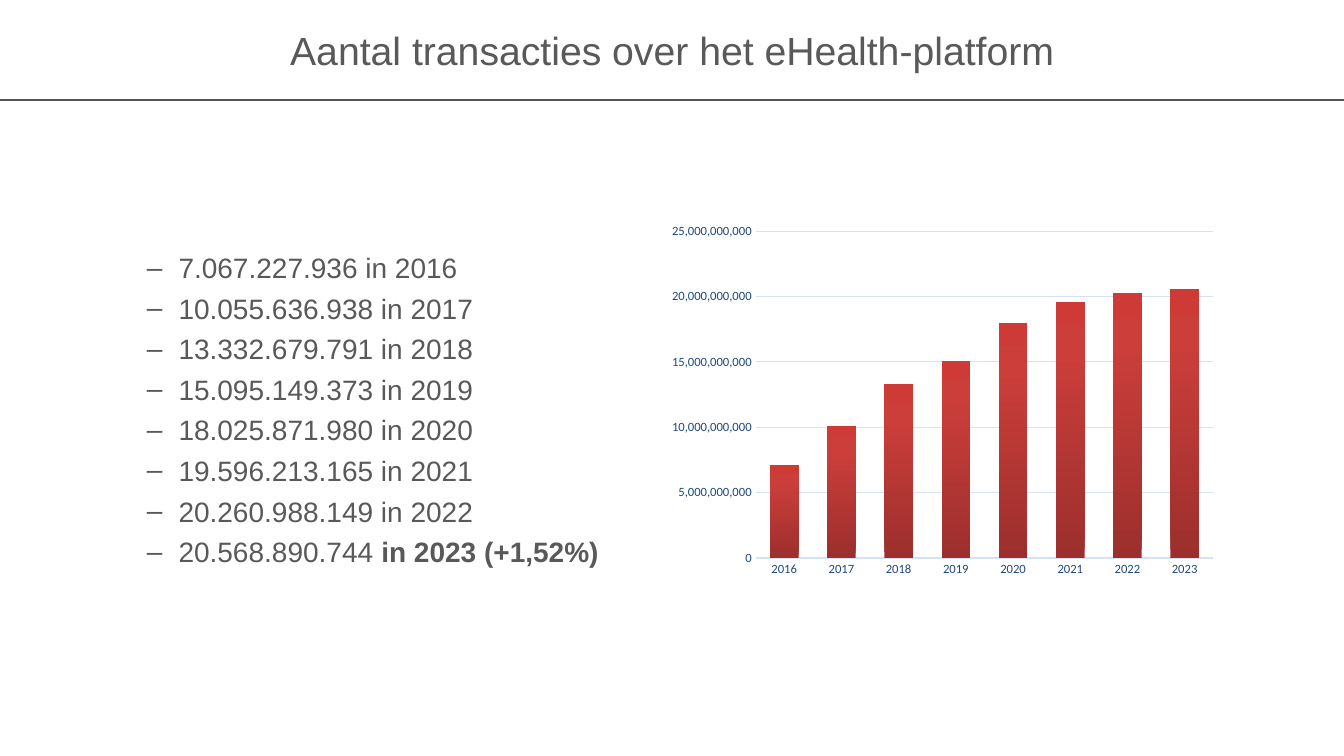
from copy import deepcopy
from pptx import Presentation
from pptx.chart.data import CategoryChartData as Data
from pptx.dml.color import RGBColor as RGB
from pptx.enum.chart import XL_CHART_TYPE as Kind, XL_TICK_MARK as Tick
from pptx.enum.shapes import MSO_CONNECTOR as Link
from pptx.enum.text import MSO_ANCHOR as Anchor, PP_ALIGN as Align
from pptx.oxml import parse_xml
from pptx.oxml.ns import nsdecls, qn
from pptx.util import Pt

GREY = RGB(0x59, 0x59, 0x59)
RULE = RGB(0x52, 0x52, 0x52)
NAVY = RGB(0x1F, 0x49, 0x7D)
PALE = RGB(0xD4, 0xE3, 0xF4)
DARK = RGB(0x9C, 0x2F, 0x2D)
RED = RGB(0xCB, 0x3E, 0x3A)
LIGHT = RGB(0xCE, 0x3B, 0x37)

YEARS = range(2016, 2024)
COUNTS = ["7.067.227.936", "10.055.636.938", "13.332.679.791",
          "15.095.149.373", "18.025.871.980", "19.596.213.165",
          "20.260.988.149", "20.568.890.744"]
BARS = [7.1, 10.1, 13.3, 15.1, 18, 19.6, 20.3, 20.6]


def add_box(left, top, width, height, anchor):
    frame = slide.shapes.add_textbox(
        Pt(left), Pt(top), Pt(width), Pt(height)).text_frame
    look = {"word_wrap": True, "vertical_anchor": anchor, "margin_left": 0,
            "margin_right": 0, "margin_top": 0, "margin_bottom": 0}
    for key, val in look.items():
        setattr(frame, key, val)
    return frame


def add_run(para, text, size, bold=False):
    run = para.add_run()
    run.text = text
    look = {"name": "Arial", "size": Pt(size), "bold": bold}
    for key, val in look.items():
        setattr(run.font, key, val)
    run.font.color.rgb = GREY


deck = Presentation()
deck.slide_width, deck.slide_height = Pt(960), Pt(540)
slide = deck.slides.add_slide(deck.slide_layouts[6])

rule = slide.shapes.add_connector(Link.STRAIGHT, 0, Pt(71.3), Pt(960), Pt(71.3))
rule.line.color.rgb = RULE
rule.line.width = Pt(1.5)
rule._element.spPr.append(parse_xml(f"<a:effectLst {nsdecls('a')}/>"))

title = add_box(0, 0, 960, 71.3, Anchor.MIDDLE).paragraphs[0]
title.alignment = Align.CENTER
add_run(title, "Aantal transacties over het eHealth-platform", 28)

body = add_box(78, 179, 370, 222, Anchor.TOP)
for row, (count, year) in enumerate(zip(COUNTS, YEARS)):
    para = body.add_paragraph() if row else body.paragraphs[0]
    props = para._p.get_or_add_pPr()
    props.set("marL", str(Pt(49.5)))
    props.set("indent", str(Pt(-22.5)))
    props.append(parse_xml(f'<a:buFont {nsdecls("a")} typeface="Arial"/>'))
    props.append(parse_xml(f'<a:buChar {nsdecls("a")} char="–"/>'))
    if row:
        para.space_before = Pt(5)
    if year == YEARS[-1]:
        add_run(para, f"{count} ", 20)
        add_run(para, f"in {year} (+1,52%)", 20, True)
    else:
        add_run(para, f"{count} in {year}", 20)

data = Data(number_format="#,##0")
data.categories = [str(year) for year in YEARS]
data.add_series("Series 1", [round(bar * 10**9) for bar in BARS])
chart = slide.shapes.add_chart(
    Kind.COLUMN_CLUSTERED, Pt(458), Pt(157), Pt(409), Pt(268.5), data).chart
chart.has_legend = chart.has_title = False
chart.font.name, chart.font.size = "Calibri", Pt(10)

plot = chart.plots[0]
for key, val in {"gap_width": 100, "overlap": -24,
                 "vary_by_categories": False}.items():
    setattr(plot, key, val)

fill = plot.series[0].format.fill
fill.gradient()
fill.gradient_angle = 90
stops = plot.series[0]._element.find(".//" + qn("a:gsLst"))
stops.append(deepcopy(stops[-1]))
for stop, (place, color) in zip(
        fill.gradient_stops, [(0, DARK), (0.8, RED), (1, LIGHT)]):
    stop.position = place
    stop.color.rgb = color

years, values = chart.category_axis, chart.value_axis
for axis in (years, values):
    axis.major_tick_mark = axis.minor_tick_mark = Tick.NONE
    font = axis.tick_labels.font
    font.name, font.size = "Calibri", Pt(9)
    font.color.rgb = NAVY
for key, val in {"minimum_scale": 0, "maximum_scale": 25 * 10**9,
                 "major_unit": 5 * 10**9}.items():
    setattr(values, key, val)
values.tick_labels.number_format = "#,##0"
values.tick_labels.number_format_is_linked = False
values.format.line.fill.background()
for line in (years.format.line, values.major_gridlines.format.line):
    line.color.rgb = PALE
    line.width = Pt(0.75)

area = chart._chartSpace.find(".//" + qn("c:plotArea"))
for old in area.findall(qn("c:layout")):
    area.remove(old)
parts = {"layoutTarget": "inner", "xMode": "edge", "yMode": "edge",
         "x": 0.2, "y": 0.03, "w": 0.8, "h": 0.87}
inner = "".join(f'<c:{key} val="{val}"/>' for key, val in parts.items())
area.insert(0, parse_xml(
    f"<c:layout {nsdecls('c')}><c:manualLayout>{inner}"
    "</c:manualLayout></c:layout>"))

deck.save("out.pptx")
